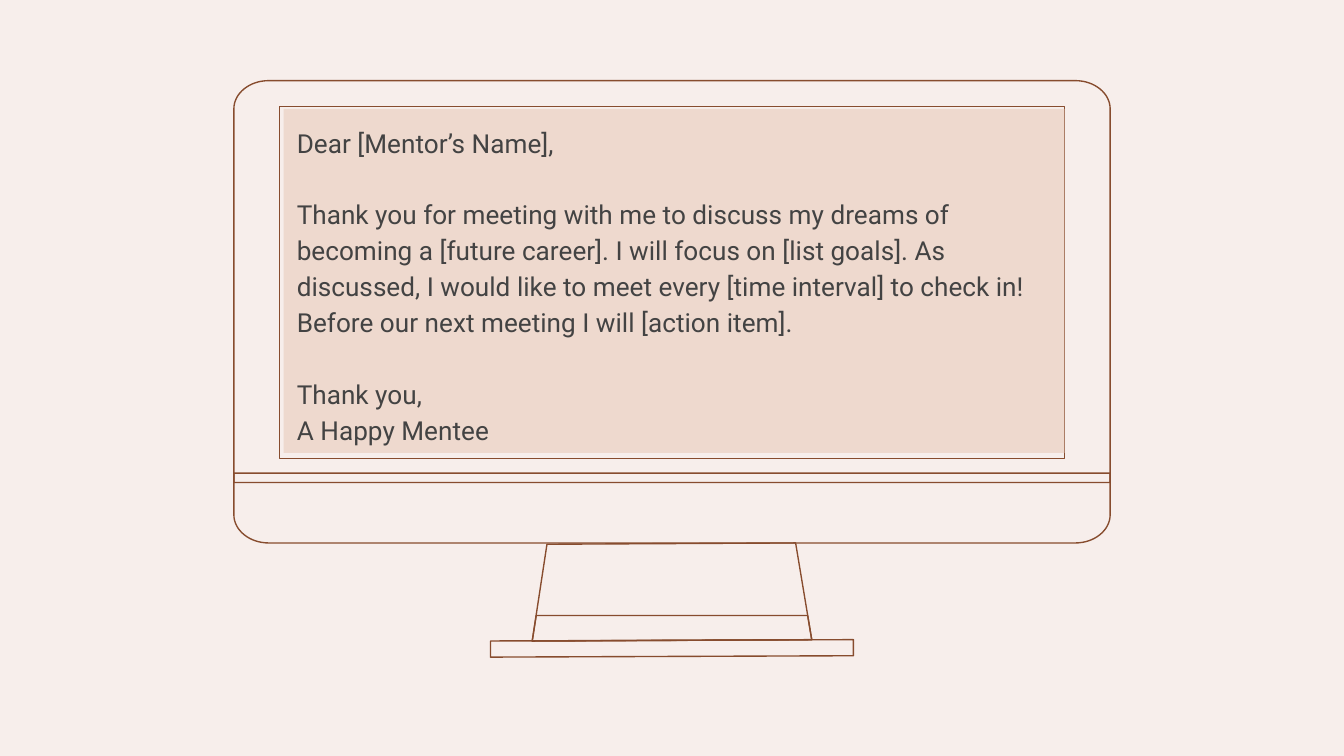
from math import cos, pi, sin

from pptx import Presentation
from pptx.dml.color import RGBColor
from pptx.enum.shapes import MSO_SHAPE
from pptx.enum.text import MSO_ANCHOR, PP_ALIGN
from pptx.util import Inches, Pt

BACKGROUND = RGBColor(0xF7, 0xEE, 0xEB)
OUTLINE = RGBColor(0x87, 0x4C, 0x2E)
SCREEN = RGBColor(0xEE, 0xD9, 0xCE)
INK = RGBColor(0x43, 0x43, 0x43)

# Letter: text and space before it in points
LETTER = [
    ("Dear [Mentor’s Name],", 0),
    ("Thank you for meeting with me to discuss my dreams of becoming a "
     "[future career]. I will focus on [list goals]. As discussed, I would "
     "like to meet every [time interval] to check in! Before our next meeting "
     "I will [action item].", 19),
    ("Thank you,", 19),
    ("A Happy Mentee", 0),
]

# Monitor: edges of the body and size of its rounded corners, in inches
LEFT, RIGHT = 1.74, 8.26
CORNER_W, CORNER_H = 0.26, 0.21
ARC_STEPS = 16


def rounded_end(flat_y, round_y):
    """Body part with square corners at flat_y and rounded ones at round_y."""
    inward = 1 if flat_y > round_y else -1
    arc = []
    for i in range(ARC_STEPS + 1):
        a = pi / 2 * i / ARC_STEPS
        arc.append((CORNER_W * (1 - cos(a)),
                    round_y + inward * CORNER_H * (1 - sin(a))))
    left = [(LEFT + dx, y) for dx, y in arc]
    right = [(RIGHT - dx, y) for dx, y in reversed(arc)]
    return [(LEFT, flat_y), *left, *right, (RIGHT, flat_y)]


OUTLINES = [
    rounded_end(3.59, 0.6),                                    # upper body
    [(6.01, 4.58), (3.99, 4.58), (3.96, 4.77), (6.04, 4.76)],  # stand foot
    [(6.35, 4.76), (3.65, 4.77), (3.65, 4.89), (6.35, 4.88)],  # base
    rounded_end(3.52, 4.04),                                   # lower body
    [(2.08, 0.79), (2.08, 3.41), (7.92, 3.41), (7.92, 0.79)],  # screen frame
    [(5.92, 4.04), (4.07, 4.05), (3.96, 4.77), (6.04, 4.76)],  # stand
]


def add_outline(shapes, points):
    (x, y), *rest = [(Inches(px), Inches(py)) for px, py in points]
    builder = shapes.build_freeform(x, y)
    builder.add_line_segments(rest, close=True)
    sp = builder.convert_to_shape()
    sp.shadow.inherit = False
    sp.fill.background()
    sp.line.color.rgb = OUTLINE
    sp.line.width = Pt(0.75)


def write(p, text, size=14, font="Roboto", color=INK, spacing=1.15, before=0):
    p.alignment = PP_ALIGN.LEFT
    p.line_spacing = spacing
    p.space_before = Pt(before)
    r = p.add_run()
    r.text = text
    r.font.size = Pt(size)
    r.font.name = font
    r.font.color.rgb = color


# Slide, 16:9
prs = Presentation()
prs.slide_width, prs.slide_height = Inches(10), Inches(10 * 9 / 16)
s = prs.slides.add_slide(prs.slide_layouts[6])
s.background.fill.solid()
s.background.fill.fore_color.rgb = BACKGROUND

# Monitor
for points in OUTLINES:
    add_outline(s.shapes, points)

# Screen with the letter
sp = s.shapes.add_shape(MSO_SHAPE.RECTANGLE, Inches(2.11), Inches(0.81),
                        Inches(5.81), Inches(2.56))
sp.shadow.inherit = False
sp.fill.solid()
sp.fill.fore_color.rgb = SCREEN
sp.line.fill.background()
tf = sp.text_frame
tf.word_wrap = True
tf.vertical_anchor = MSO_ANCHOR.TOP
tf.margin_left = tf.margin_right = tf.margin_top = tf.margin_bottom = Inches(0.1)
for i, (text, before) in enumerate(LETTER):
    p = tf.add_paragraph() if i else tf.paragraphs[0]
    write(p, text, before=before)

prs.save("out.pptx")
